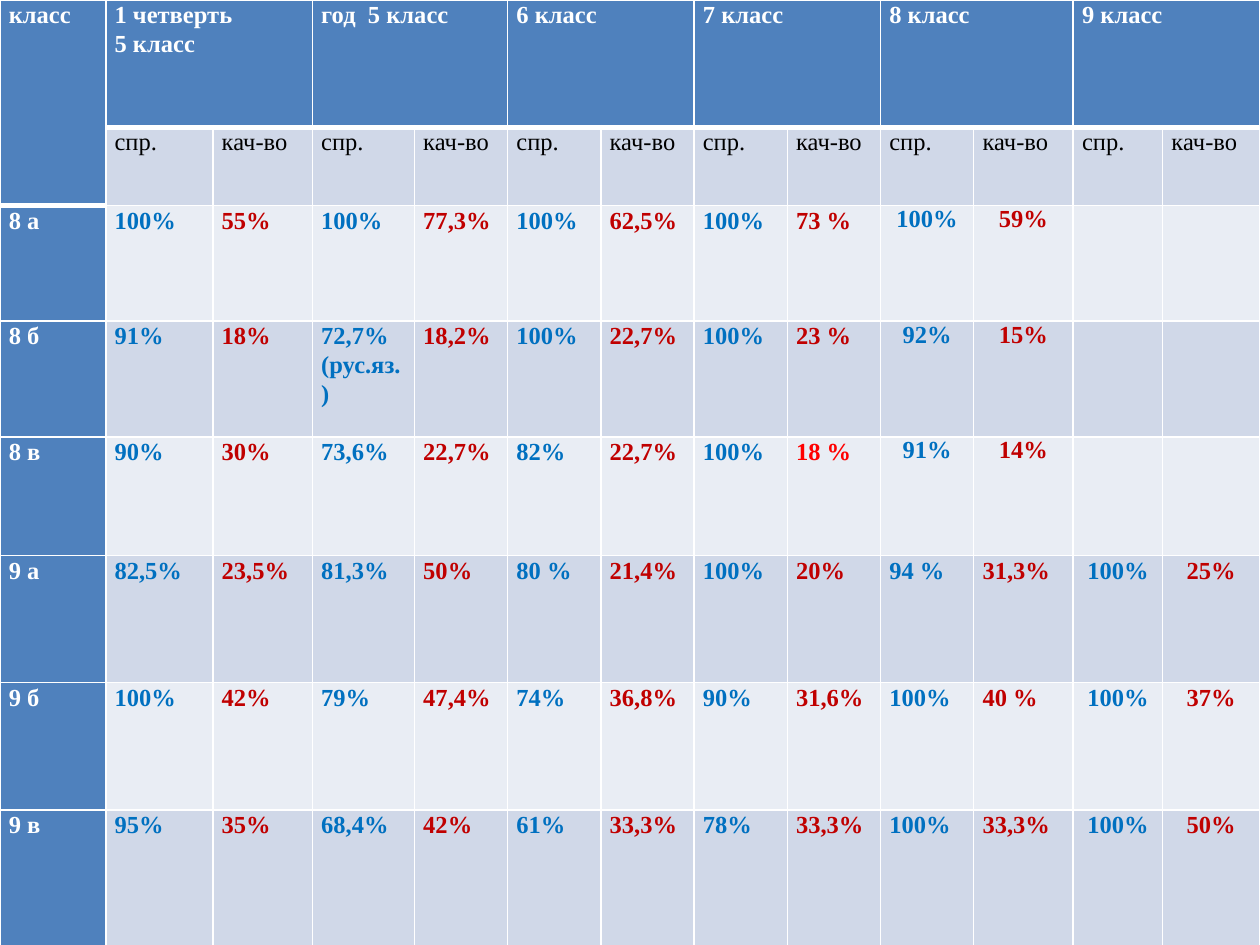
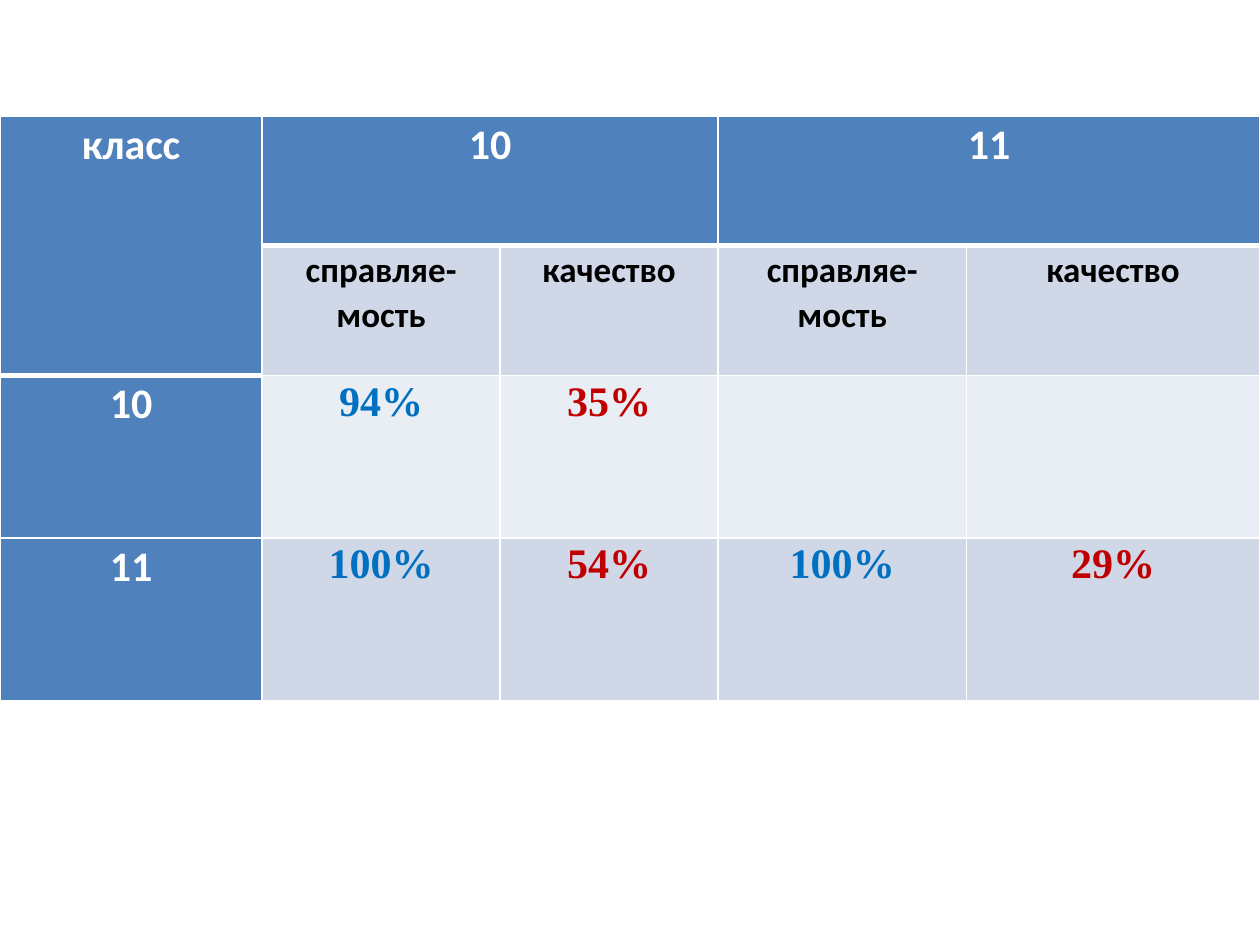
from pptx import Presentation
from pptx.util import Inches, Pt
from pptx.dml.color import RGBColor as RGB
from pptx.enum.text import PP_ALIGN as Align
from pptx.oxml import parse_xml
from pptx.oxml.ns import nsdecls

SERIF, SANS = "Times New Roman", "Calibri"
WHITE, BLACK, HEAD = "FFFFFF", "000000", "4F81BD"
BANDS = ["E9EDF4", "D0D8E8"]
BLUE, DARK, RED = "0070C0", "C00000", "FF0000"


def tint(code):
    return RGB.from_string(code)


class Deck:
    def __init__(self):
        self.prs = Presentation()
        self.prs.slide_width = Inches(10)
        self.prs.slide_height = Inches(7.5)

    def page(self):
        self.slide = self.prs.slides.add_slide(self.prs.slide_layouts[6])

    def edge(self, cell, top, base):
        props = cell._tc.get_or_add_tcPr()
        for side, width in zip("LRTB", (1, 1, top, base)):
            props.append(parse_xml(
                f'<a:ln{side} {nsdecls("a")} w="{Pt(width)}"><a:solidFill>'
                f'<a:srgbClr val="{WHITE}"/></a:solidFill></a:ln{side}>'))

    def paint(self, cell, code):
        cell.fill.solid()
        cell.fill.fore_color.rgb = tint(code)
        cell.margin_left = cell.margin_right = Inches(0.07)
        cell.margin_top = cell.margin_bottom = 0

    def label(self, cell, text, size, font, color, bold=True, mid=False, lead=1.07):
        cell.text_frame.text = text
        for para in cell.text_frame.paragraphs:
            para.alignment = Align.CENTER if mid else Align.LEFT
            para.line_spacing = lead
            for run in para.runs:
                run.font.size = Pt(size)
                run.font.name = font
                run.font.bold = bold
                run.font.color.rgb = tint(color)

    def table(self, top, cols, rows):
        frame = self.slide.shapes.add_table(
            len(rows), len(cols), 0, Inches(top), Inches(sum(cols)), Inches(sum(rows)))
        grid = frame.table
        grid.horz_banding = False
        for col, width in zip(grid.columns, cols):
            col.width = Inches(width)
        for row, height in zip(grid.rows, rows):
            row.height = Inches(height)
        for r in range(len(rows)):
            for c in range(len(cols)):
                cell = grid.cell(r, c)
                thick = 2 if c == 0 else 1
                self.edge(cell, 3 if r == thick else 1, 3 if r == thick - 1 else 1)
                self.paint(cell, HEAD if r == 0 or c == 0 else BANDS[r % 2])
        grid.cell(0, 0).merge(grid.cell(1, 0))
        for c in range(1, len(cols), 2):
            grid.cell(0, c).merge(grid.cell(0, c + 1))
        return grid

    def heads(self, grid, groups, pair, size, font, small, bold, mid):
        self.label(grid.cell(0, 0), "класс", size, font, WHITE, mid=mid)
        for i, group in enumerate(groups):
            c = 2 * i + 1
            self.label(grid.cell(0, c), group, size, font, WHITE, mid=mid)
            for j, text in enumerate(pair):
                self.label(grid.cell(1, c + j), text, small, font, BLACK, bold, mid)

    def body(self, grid, lines, size, font, style):
        for r, line in enumerate(lines, 2):
            name, *marks = line.split("|")
            self.label(grid.cell(r, 0), name, size, font, WHITE, **style(r, 0))
            for c, mark in enumerate(marks, 1):
                look = {"color": BLUE if c % 2 else DARK, **style(r, c)}
                self.label(grid.cell(r, c), mark, size, SERIF, **look)


def middle(r, c):
    look = {"mid": c > 10}
    if r < 5 and c in (9, 10):
        look = {"mid": True, "lead": 1.0}
    if (r, c) == (4, 8):
        look["color"] = RED
    return look


def main():
    deck = Deck()

    deck.page()
    grid = deck.table(
        0, [0.84, 0.85, 0.79, 0.81] + [0.74] * 6 + [0.79, 0.71, 0.77],
        [1.01, 0.62, 0.92, 0.92, 0.94, 1.01, 1.01, 1.08])
    groups = ["1 четверть\n5 класс", "год  5 класс"] + [f"{n} класс" for n in range(6, 10)]
    deck.heads(grid, groups, ["спр.", "кач-во"], 14, SERIF, 14, False, False)
    deck.body(grid, [
        "8 а|100%|55%|100%|77,3%|100%|62,5%|100%|73 %|100%|59%",
        "8 б|91%|18%|72,7%\n(рус.яз.)|18,2%|100%|22,7%|100%|23 %|92%|15%",
        "8 в|90%|30%|73,6%|22,7%|82%|22,7%|100%|18 %|91%|14%",
        "9 а|82,5%|23,5%|81,3%|50%|80 %|21,4%|100%|20%|94 %|31,3%|100%|25%",
        "9 б|100%|42%|79%|47,4%|74%|36,8%|90%|31,6%|100%|40 %|100%|37%",
        "9 в|95%|35%|68,4%|42%|61%|33,3%|78%|33,3%|100%|33,3%|100%|50%",
    ], 14, SERIF, middle)

    deck.page()
    grid = deck.table(0.92, [2.08, 1.89, 1.73, 1.97, 2.33], [1.03, 1.03, 1.29, 1.29])
    deck.heads(grid, ["10", "11"], ["справляе-\nмость", "качество"], 24, SANS, 20, True, True)
    deck.body(grid, ["10|94%|35%", "11|100%|54%|100%|29%"], 24, SANS,
              lambda r, c: {"mid": True})

    deck.prs.save("out.pptx")


if __name__ == "__main__":
    main()
